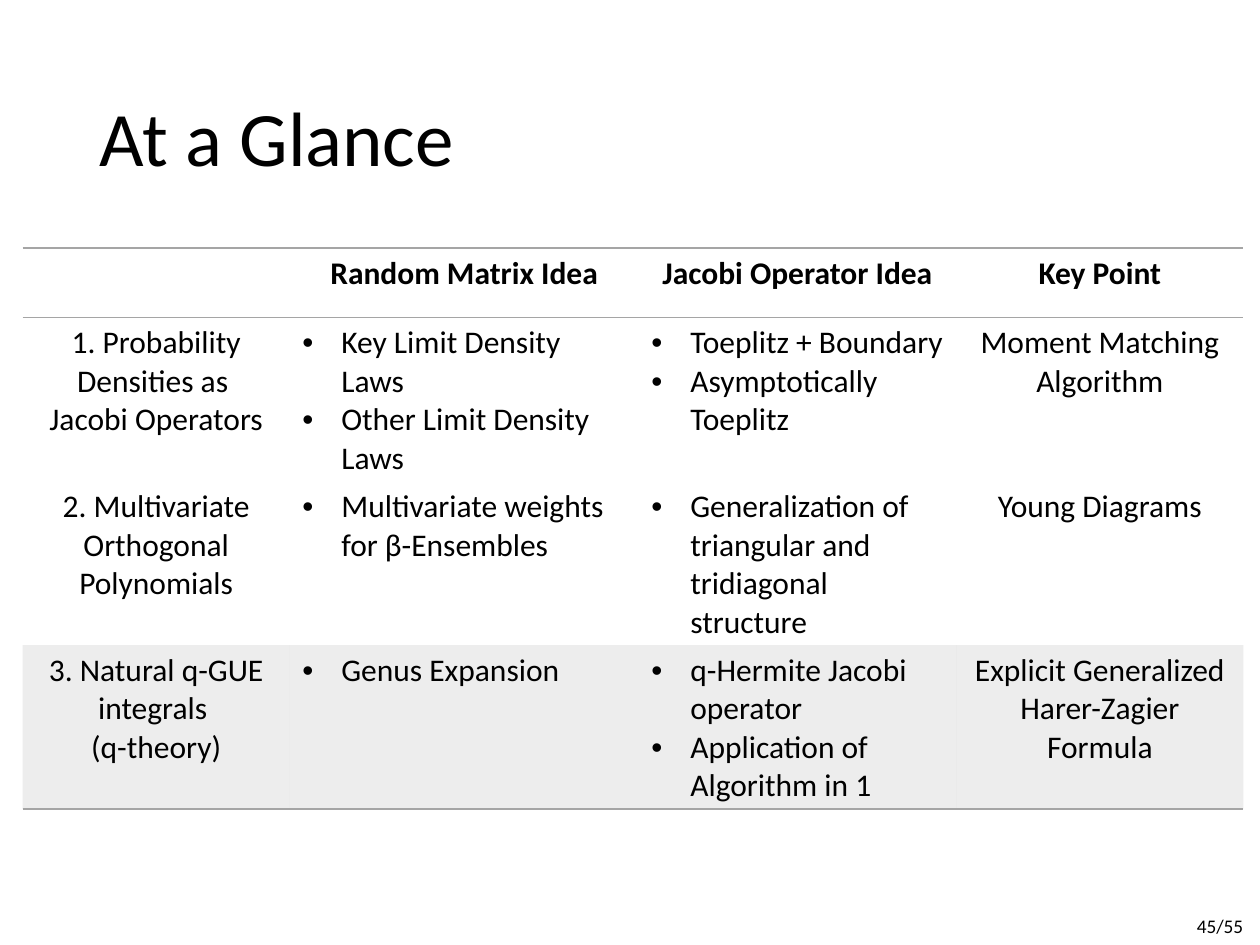
import pptx
import pptx.util
import pptx.dml.color
import pptx.enum.text
import pptx.oxml
import pptx.oxml.ns
from lxml import etree

Inches = pptx.util.Inches
Pt = pptx.util.Pt
RGBColor = pptx.dml.color.RGBColor
ALIGN = pptx.enum.text.PP_ALIGN
qn = pptx.oxml.ns.qn

BLACK = RGBColor(0x00, 0x00, 0x00)
WHITE = RGBColor(0xFF, 0xFF, 0xFF)
GREY = RGBColor(0xA5, 0xA5, 0xA5)
FONT = "Calibri"
PLAIN = "{2D5ABB26-0587-4C30-8999-92F81FD0307C}"  # no style, no grid

WIDTHS = [2.12, 2.77, 2.52, 2.28]
HEIGHTS = [0.55, 1.3, 1.3, 1.3]
FILLS = [None, WHITE, None, GREY]
RULES = [("lnT", "lnB"), (), (), ("lnB",)]
BULLETS = (1, 2)
ROWS = [
    [[], ["Random Matrix Idea"], ["Jacobi Operator Idea"], ["Key Point"]],
    [["1. Probability Densities as ", "Jacobi Operators"],
     ["Key Limit Density Laws", "Other Limit Density Laws"],
     ["Toeplitz + Boundary", "Asymptotically Toeplitz"],
     ["Moment Matching Algorithm"]],
    [["2. Multivariate Orthogonal Polynomials"],
     ["Multivariate weights for β-Ensembles"],
     ["Generalization of triangular and tridiagonal structure"],
     ["Young Diagrams"]],
    [["3. Natural q-GUE integrals ", "(q-theory)"],
     ["Genus Expansion"],
     ["q-Hermite Jacobi operator", "Application of Algorithm in 1"],
     ["Explicit Generalized Harer-Zagier Formula"]],
]


def add_run(para, text, size, bold=False):
    run = para.add_run()
    run.text = text
    run.font.name = FONT
    run.font.size = Pt(size)
    run.font.bold = bold
    run.font.color.rgb = BLACK


def add_bullet(para):
    props = para._p.get_or_add_pPr()
    props.set("marL", str(Inches(0.31)))
    props.set("indent", str(-Inches(0.31)))
    etree.SubElement(props, qn("a:buFont")).set("typeface", "Arial")
    etree.SubElement(props, qn("a:buChar")).set("char", "•")


def fill_cell(cell, color):
    """Tint the cell at 20% opacity, or leave it clear."""
    if color is None:
        cell.fill.background()
        return
    cell.fill.solid()
    cell.fill.fore_color.rgb = color
    tint = cell._tc.tcPr.find(".//" + qn("a:srgbClr"))
    etree.SubElement(tint, qn("a:alpha")).set("val", "20000")


def rule_cell(cell, sides):
    """Draw thin grey borders, which must come before the fill."""
    props = cell._tc.get_or_add_tcPr()
    for spot, side in enumerate(sides):
        line = etree.Element(qn("a:" + side), w=str(Pt(1)))
        solid = etree.SubElement(line, qn("a:solidFill"))
        etree.SubElement(solid, qn("a:srgbClr")).set("val", str(GREY))
        props.insert(spot, line)


def write_cell(cell, lines, bullet, bold):
    frame = cell.text_frame
    for i, text in enumerate(lines):
        para = frame.add_paragraph() if i else frame.paragraphs[0]
        if bullet:
            add_bullet(para)
        else:
            para.alignment = ALIGN.CENTER
        add_run(para, text, 18, bold)


def add_title(slide, left, top, width, height):
    title = slide.shapes.title
    title.left, title.top = left, top
    title.width, title.height = width, height
    frame = title.text_frame
    frame.vertical_anchor = pptx.enum.text.MSO_ANCHOR.MIDDLE
    para = frame.paragraphs[0]
    para.alignment = ALIGN.LEFT
    para.line_spacing = 0.9
    add_run(para, "At a Glance", 44)


def add_grid(slide, left, top, width, height):
    shape = slide.shapes.add_table(len(ROWS), len(WIDTHS), left, top, width, height)
    table = shape.table
    table.first_row = table.horz_banding = False
    table._tbl.tblPr.find(qn("a:tableStyleId")).text = PLAIN
    for col, size in zip(table.columns, WIDTHS):
        col.width = Inches(size)
    for r, row in enumerate(ROWS):
        table.rows[r].height = Inches(HEIGHTS[r])
        for c, lines in enumerate(row):
            cell = table.cell(r, c)
            write_cell(cell, lines, r > 0 and c in BULLETS, r == 0)
            fill_cell(cell, FILLS[r])
            rule_cell(cell, RULES[r])


def add_number(slide, left, top, width, height):
    frame = slide.shapes.add_textbox(left, top, width, height).text_frame
    frame.word_wrap = False
    add_run(frame.paragraphs[0], "45/55", 11)


def main():
    deck = pptx.Presentation()
    deck.slide_width, deck.slide_height = Inches(10), Inches(7.5)
    slide = deck.slides.add_slide(deck.slide_layouts[5])
    add_number(slide, Inches(9.4), Inches(7.21), Inches(0.6), Inches(0.29))
    add_title(slide, Inches(0.69), Inches(0.4), Inches(8.62), Inches(1.45))
    add_grid(slide, Inches(0.18), Inches(1.97), Inches(9.69), Inches(4.45))
    deck.save("out.pptx")


if __name__ == "__main__":
    main()
